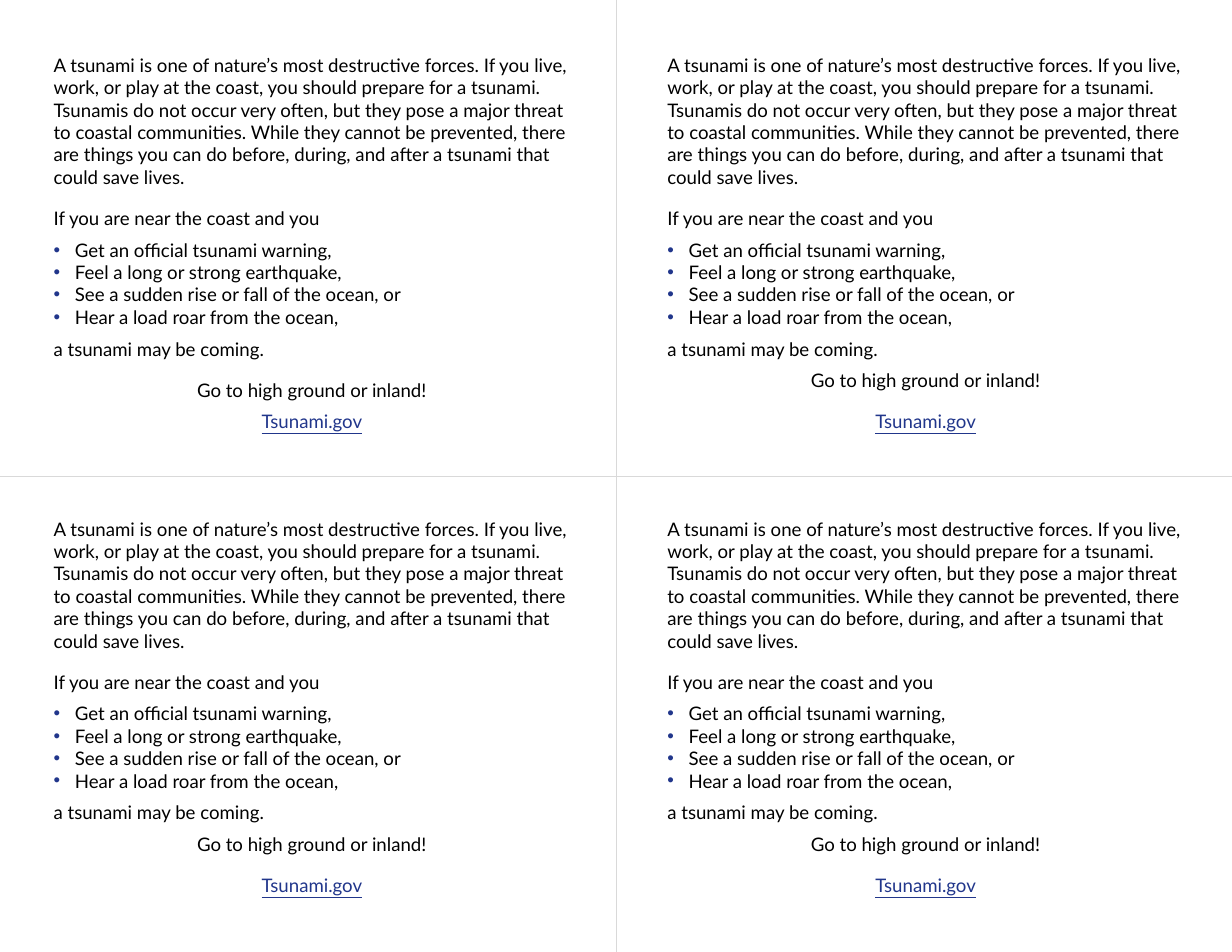
from lxml import etree
from pptx import Presentation
from pptx import util as u
from pptx.dml.color import RGBColor
from pptx.enum import shapes, text
from pptx.oxml import ns

COLORS = {"text": "000000", "accent": "21368B", "guide": "D9D9D9"}
WIDTH, HEIGHT = 11, 8.5

INTRO = (
    "A tsunami is one of nature’s most destructive forces. If you live, work, "
    "or play at the coast, you should prepare for a tsunami. Tsunamis do not "
    "occur very often, but they pose a major threat to coastal communities. "
    "While they cannot be prevented, there are things you can do before, "
    "during, and after a tsunami that could save lives."
)

# Each paragraph: wording, style, space after in points
CARD = [
    (INTRO, "body", 12),
    ("If you are near the coast and you", "body", 6),
    ("Get an official tsunami warning,", "bullet", 0),
    ("Feel a long or strong earthquake,", "bullet", 0),
    ("See a sudden rise or fall of the ocean, or", "bullet", 0),
    ("Hear a load roar from the ocean,", "bullet", 6),
    ("a tsunami may be coming.", "body", 6),
    ("Go to high ground or inland!", "center", 12),
    ("Tsunami.gov", "site", 3),
]
# The top left card has its wider gap one paragraph earlier
FIRST_CARD_GAPS = {"a tsunami may be coming.": 12, "Go to high ground or inland!": 6}


def add_bullet(p):
    pPr = p._p.get_or_add_pPr()
    pPr.set("marL", str(u.Inches(0.19)))
    pPr.set("indent", str(-u.Inches(0.19)))
    color = etree.SubElement(pPr, ns.qn("a:buClr"))
    etree.SubElement(color, ns.qn("a:srgbClr"), val=COLORS["accent"])
    etree.SubElement(pPr, ns.qn("a:buFont"), typeface="Arial")
    etree.SubElement(pPr, ns.qn("a:buChar"), char="•")


prs = Presentation()
prs.slide_width, prs.slide_height = u.Inches(WIDTH), u.Inches(HEIGHT)
s = prs.slides.add_slide(prs.slide_layouts[6])

# Cutting guides
for x1, y1, x2, y2 in [
    (WIDTH / 2, 0, WIDTH / 2, HEIGHT),
    (0, HEIGHT / 2, WIDTH, HEIGHT / 2),
]:
    guide = s.shapes.add_connector(
        shapes.MSO_CONNECTOR.STRAIGHT,
        u.Inches(x1), u.Inches(y1), u.Inches(x2), u.Inches(y2),
    )
    guide.line.color.rgb = RGBColor.from_string(COLORS["guide"])
    guide.line.width = u.Pt(0.5)
    etree.SubElement(guide._element.spPr, ns.qn("a:effectLst"))

# Four cards, two by two
for row, top in enumerate((0.43, 4.57)):
    for col, left in enumerate((0.38, 5.86)):
        gaps = FIRST_CARD_GAPS if row == col == 0 else {}
        sp = s.shapes.add_textbox(
            u.Inches(left), u.Inches(top), u.Inches(4.81), u.Inches(3.52)
        )
        tf = sp.text_frame
        tf.word_wrap = True
        tf.auto_size = text.MSO_AUTO_SIZE.SHAPE_TO_FIT_TEXT
        for i, (wording, style, after) in enumerate(CARD):
            p = tf.add_paragraph() if i else tf.paragraphs[0]
            p.text = wording
            if style == "bullet":
                add_bullet(p)
            elif style in ("center", "site"):
                p.alignment = text.PP_ALIGN.CENTER
            p.space_after = u.Pt(gaps.get(wording, after))
            r = p.runs[0]
            r.font.name = "Lato"
            r.font.size = u.Pt(12)
            color = COLORS["accent" if style == "site" else "text"]
            r.font.color.rgb = RGBColor.from_string(color)
            if style == "site":
                r.font.underline = True

prs.save("out.pptx")
